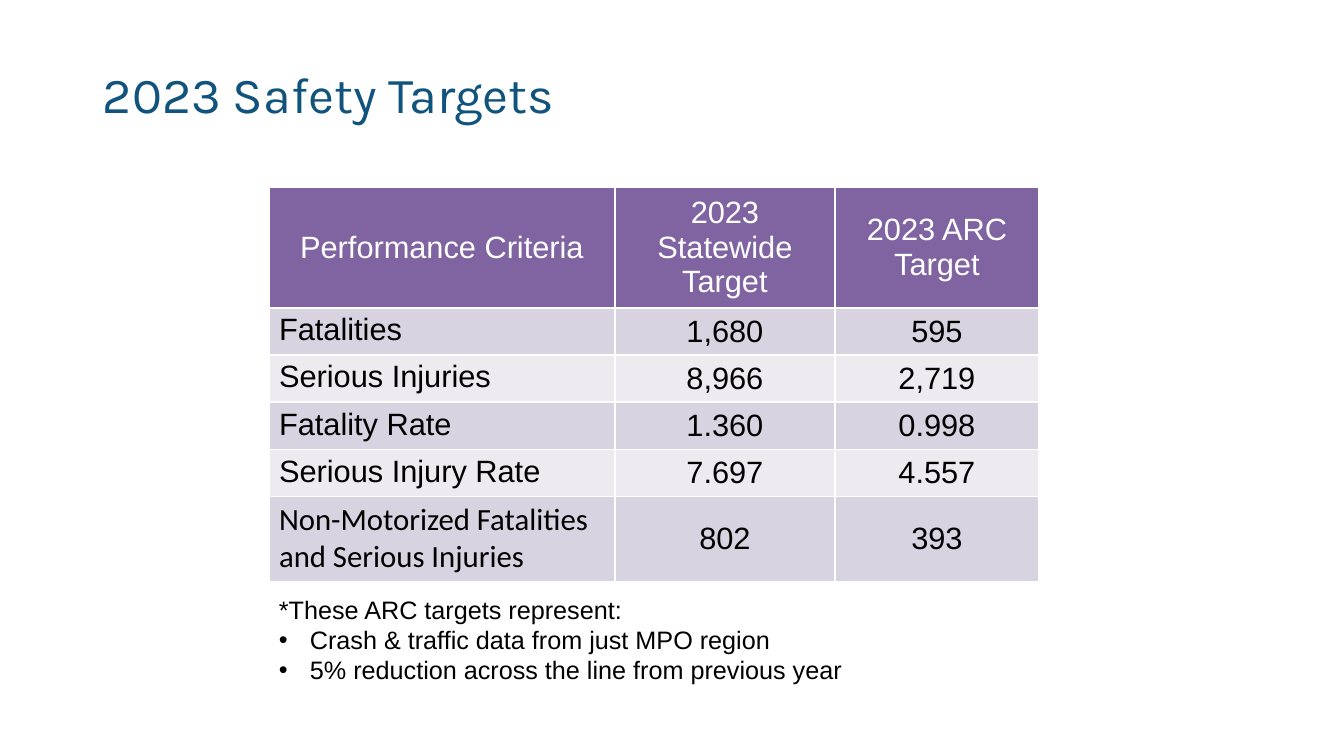
from lxml.etree import SubElement
from pptx import Presentation
from pptx.dml.color import RGBColor
from pptx.enum.text import MSO_ANCHOR as Anchor, PP_ALIGN as Align
from pptx.oxml import parse_xml
from pptx.oxml.ns import nsdecls, qn
from pptx.util import Pt

PX = 12192000 / 1344  # EMU per px

WHITE = RGBColor(0xFF, 0xFF, 0xFF)
BLACK = RGBColor(0x00, 0x00, 0x00)
BLUE = RGBColor(0x10, 0x53, 0x7D)
PURPLE = RGBColor(0x80, 0x64, 0xA2)
BANDS = (RGBColor(0xD8, 0xD3, 0xE0), RGBColor(0xED, 0xEA, 0xF0))

HEADINGS = ("Performance Criteria", "2023 Statewide Target", "2023 ARC Target")
TARGETS = (
    ("Fatalities", "1,680", "595"),
    ("Serious Injuries", "8,966", "2,719"),
    ("Fatality Rate", "1.360", "0.998"),
    ("Serious Injury Rate", "7.697", "4.557"),
    ("Non-Motorized Fatalities and Serious Injuries", "802", "393"),
)
COLUMN_WIDTHS = (346, 220, 204)
ROW_HEIGHTS = (113, 44, 44, 44, 44, 85)
NOTE_INTRO = "*These ARC targets represent:"
NOTE_POINTS = (
    "Crash & traffic data from just MPO region",
    "5% reduction across the line from previous year",
)


def px(length):
    return round(length * PX)


def add_run(paragraph, text, size, color, font="Arial"):
    run = paragraph.add_run()
    run.text = text
    run.font.name = font
    run.font.size = Pt(size)
    run.font.bold = False
    run.font.color.rgb = color


def add_text_frame(slide, box):
    frame = slide.shapes.add_textbox(*map(px, box)).text_frame
    frame.word_wrap = True
    return frame


def add_title(slide, box):
    title = add_text_frame(slide, box)
    title.vertical_anchor = Anchor.MIDDLE
    title.margin_left = px(36)
    add_run(title.paragraphs[0], "2023 Safety Targets", 36, BLUE, "Karla")


def add_borders(cell):
    properties = cell._tc.get_or_add_tcPr()
    for position, side in enumerate("LRTB"):
        properties.insert(position, parse_xml(
            f'<a:ln{side} {nsdecls("a")} w="{Pt(1)}"><a:solidFill>'
            f'<a:srgbClr val="{WHITE}"/></a:solidFill></a:ln{side}>'))


def add_targets_table(slide, left, top):
    rows = (HEADINGS, *TARGETS)
    table = slide.shapes.add_table(
        len(rows), len(HEADINGS), px(left), px(top),
        px(sum(COLUMN_WIDTHS)), px(sum(ROW_HEIGHTS))).table
    for column, width in zip(table.columns, COLUMN_WIDTHS):
        column.width = px(width)
    for row, height in zip(table.rows, ROW_HEIGHTS):
        row.height = px(height)

    for r, texts in enumerate(rows):
        is_header = r == 0
        for c, text in enumerate(texts):
            cell = table.cell(r, c)
            is_label = c == 0 and not is_header
            cell.fill.solid()
            cell.fill.fore_color.rgb = PURPLE if is_header else BANDS[(r - 1) % 2]
            add_borders(cell)
            cell.vertical_anchor = Anchor.TOP if is_label else Anchor.MIDDLE
            paragraph = cell.text_frame.paragraphs[0]
            paragraph.alignment = Align.LEFT if is_label else Align.CENTER
            # The last criterion is set in its own font
            font = "Calibri" if is_label and r == len(TARGETS) else "Arial"
            add_run(paragraph, text, 22, WHITE if is_header else BLACK, font)


def add_notes(slide, box):
    notes = add_text_frame(slide, box)
    add_run(notes.paragraphs[0], NOTE_INTRO, 18, BLACK)
    for point in NOTE_POINTS:
        paragraph = notes.add_paragraph()
        properties = paragraph._p.get_or_add_pPr()
        properties.set("marL", str(px(31)))
        properties.set("indent", str(-px(31)))
        SubElement(properties, qn("a:buFont")).set("typeface", "Arial")
        SubElement(properties, qn("a:buChar")).set("char", "•")
        add_run(paragraph, point, 18, BLACK)


def main():
    presentation = Presentation()
    presentation.slide_width = px(1344)
    presentation.slide_height = px(756)
    slide = presentation.slides.add_slide(presentation.slide_layouts[6])

    add_title(slide, (67, 30, 1144, 126))
    add_targets_table(slide, 269, 187)
    add_notes(slide, (269, 589, 770, 102))

    presentation.save("out.pptx")


if __name__ == "__main__":
    main()
